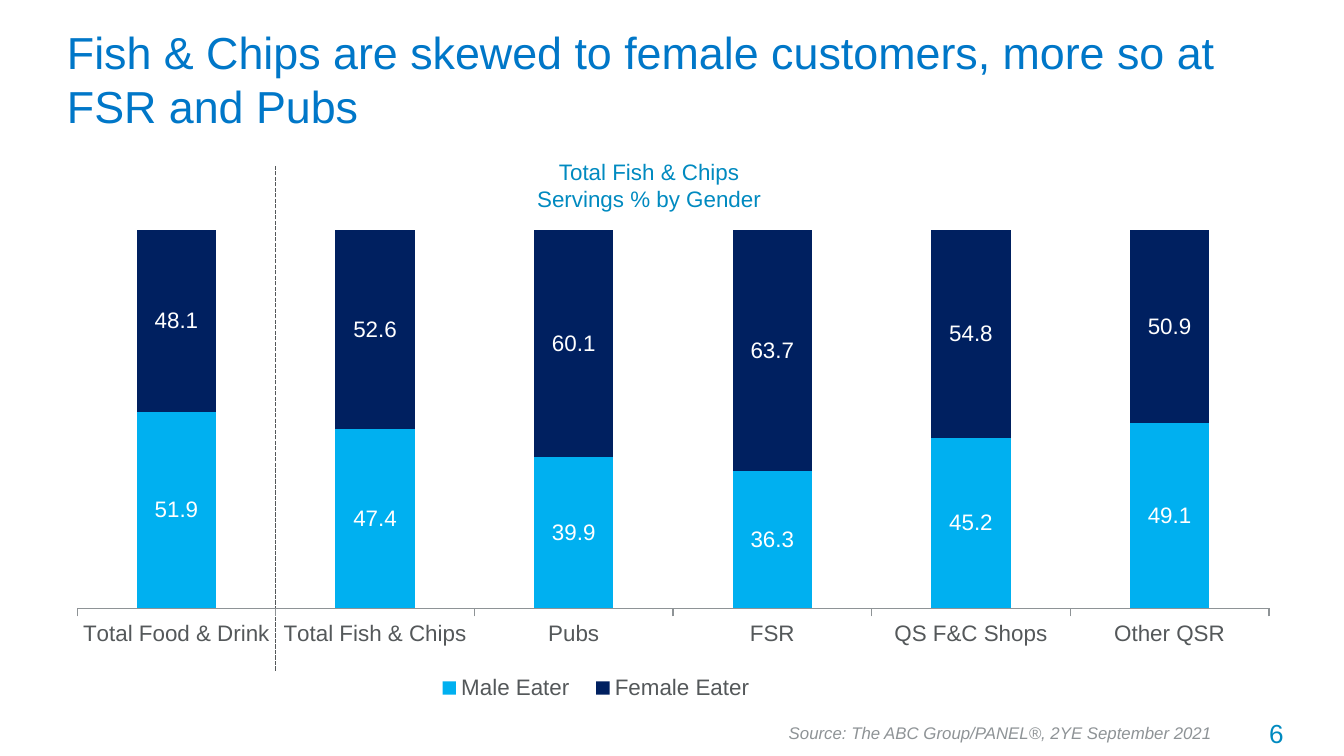
import pptx
import pptx.chart.data
import pptx.dml.color
import pptx.enum.chart
import pptx.enum.dml
import pptx.enum.shapes
import pptx.enum.text
import pptx.oxml
import pptx.oxml.ns
import pptx.util
from pptx.util import Inches

COLORS = {
    "title": "0077C8",
    "accent": "008AC0",
    "text": "54585A",
    "source": "8E9396",
    "axis": "8E9396",
    "male": "00B0F0",
    "female": "002060",
    "label": "FFFFFF",
}
FONT = "Arial"
ALIGN = pptx.enum.text.PP_ALIGN

CATEGORIES = ["Total Food & Drink", "Total Fish & Chips", "Pubs", "FSR",
              "QS F&C Shops", "Other QSR"]
SERIES = [
    ("Male Eater", "male", [51.9, 47.4, 39.9, 36.3, 45.2, 49.1]),
    ("Female Eater", "female", [48.1, 52.6, 60.1, 63.7, 54.8, 50.9]),
]


def rgb(name):
    return pptx.dml.color.RGBColor.from_string(COLORS[name])


def set_font(font, size, color, italic=False):
    font.name = FONT
    font.size = pptx.util.Pt(size)
    font.color.rgb = rgb(color)
    font.italic = italic


def add_text(page, box, lines, size, color, align=ALIGN.LEFT, italic=False,
             wrap=True, anchor=pptx.enum.text.MSO_ANCHOR.TOP):
    frame = page.shapes.add_textbox(*map(Inches, box)).text_frame
    frame.word_wrap = wrap
    frame.vertical_anchor = anchor
    frame.text = "\n".join(lines)
    for para in frame.paragraphs:
        para.alignment = align
        set_font(para.font, size, color, italic)


def set_layout(element, index, x, y, width, height, inner=False):
    """Place a chart part by fractions of the chart area."""
    for old in element.findall(pptx.oxml.ns.qn("c:layout")):
        element.remove(old)
    target = '<c:layoutTarget val="inner"/>' if inner else ""
    element.insert(index, pptx.oxml.parse_xml(
        f'<c:layout {pptx.oxml.ns.nsdecls("c")}><c:manualLayout>{target}'
        '<c:xMode val="edge"/><c:yMode val="edge"/>'
        f'<c:x val="{x}"/><c:y val="{y}"/><c:w val="{width}"/><c:h val="{height}"/>'
        '</c:manualLayout></c:layout>'))


def add_divider(page, x, top, bottom):
    line = page.shapes.add_connector(
        pptx.enum.shapes.MSO_CONNECTOR.STRAIGHT,
        Inches(x), Inches(bottom), Inches(x), Inches(top))
    line.line.color.rgb = rgb("text")
    line.line.width = pptx.util.Pt(0.75)
    line.line.dash_style = pptx.enum.dml.MSO_LINE.SQUARE_DOT
    line._element.spPr.append(pptx.oxml.parse_xml(
        f'<a:effectLst {pptx.oxml.ns.nsdecls("a")}/>'))


def add_gender_chart(page, box):
    data = pptx.chart.data.CategoryChartData(number_format="#,##0.0")
    data.categories = CATEGORIES
    for name, _, values in SERIES:
        data.add_series(name, values)
    chart = page.shapes.add_chart(
        pptx.enum.chart.XL_CHART_TYPE.COLUMN_STACKED_100,
        *map(Inches, box), data).chart
    chart.has_title = False
    set_font(chart.font, 12, "text")

    # Columns and their labels
    plot = chart.plots[0]
    plot.gap_width = 150
    plot.overlap = 100
    plot.vary_by_categories = False
    for series, (_, color, _) in zip(plot.series, SERIES):
        series.format.fill.solid()
        series.format.fill.fore_color.rgb = rgb(color)
        labels = series.data_labels
        labels.show_value = True
        labels.number_format = "#,##0.0"
        labels.number_format_is_linked = False
        set_font(labels.font, 12, "label")

    # Axes
    chart.value_axis.visible = False
    chart.value_axis.has_major_gridlines = False
    axis = chart.category_axis
    axis.major_tick_mark = pptx.enum.chart.XL_TICK_MARK.OUTSIDE
    axis.format.line.color.rgb = rgb("axis")

    # Legend and plot area
    chart.has_legend = True
    chart.legend.position = pptx.enum.chart.XL_LEGEND_POSITION.BOTTOM
    chart.legend.include_in_layout = False
    set_layout(chart.legend._element, 1, 0.3, 0.92, 0.28, 0.09)
    plot_area = chart._chartSpace.chart.plotArea
    set_layout(plot_area, 0, 0.019, 0.052, 0.967, 0.75, inner=True)


def add_chart_region(page, left, top):
    add_text(page, (left + 3.49, top, 1.88, 0.51),
             ["Total Fish & Chips", "Servings % by Gender"],
             12, "accent", ALIGN.CENTER, wrap=False)
    add_divider(page, left + 1.65, top + 0.1, top + 3.86)
    add_gender_chart(page, (left, top + 0.39, 9.17, 3.75))


def add_footer(page, left, top):
    add_text(page, (left, top + 0.04, 3.41, 0.25),
             ["Source: The ABC Group/PANEL®, 2YE September 2021"],
             9, "source", italic=True, wrap=False)
    add_text(page, (left + 3.08, top, 0.8, 0.34), ["6"], 14, "accent", ALIGN.RIGHT)


def main():
    deck = pptx.Presentation()
    # Widescreen, 16:9
    deck.slide_width = Inches(10)
    deck.slide_height = deck.slide_width * 9 // 16
    page = deck.slides.add_slide(deck.slide_layouts[6])
    add_text(page, (0.4, 0.23, 9.17, 0.71),
             ["Fish & Chips are skewed to female customers, more so at FSR and Pubs"],
             24, "title", anchor=pptx.enum.text.MSO_ANCHOR.MIDDLE)
    add_chart_region(page, 0.4, 1.13)
    add_footer(page, 5.77, 5.29)
    deck.save("out.pptx")


if __name__ == "__main__":
    main()
